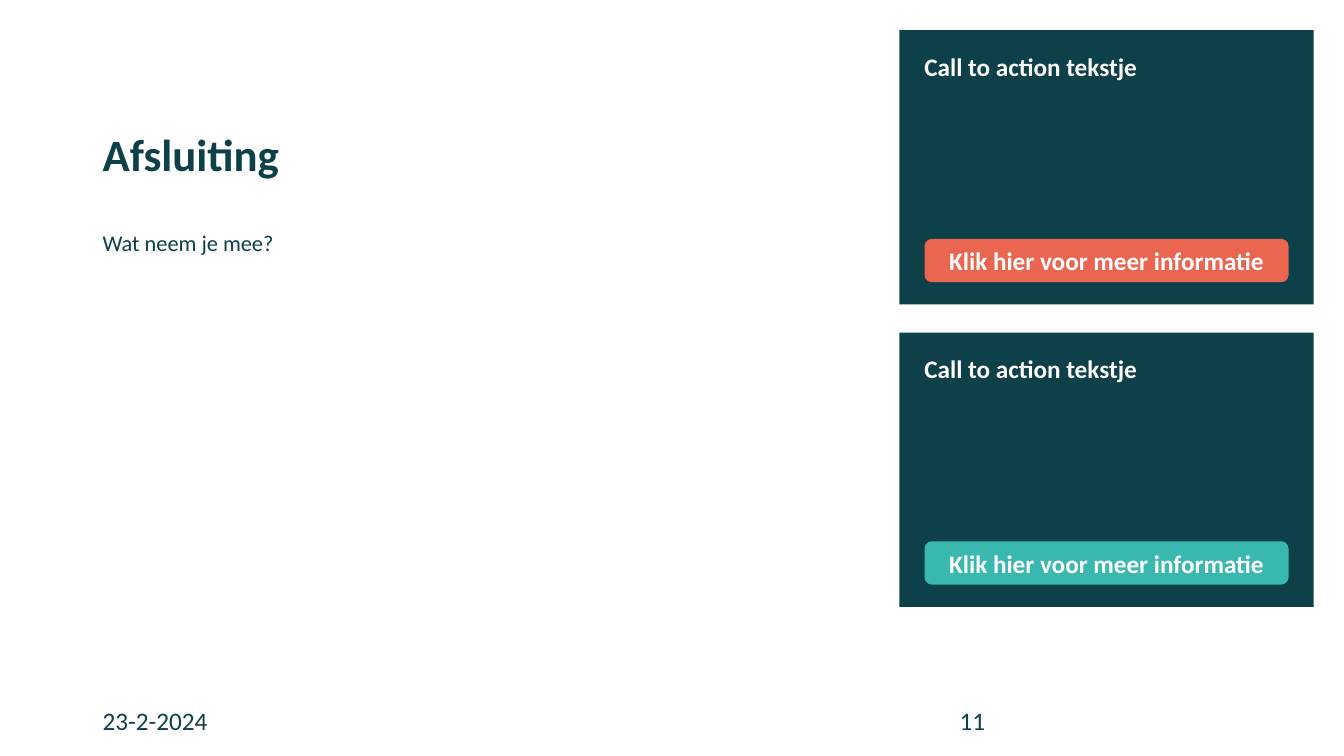
"""Build the closing slide with two call-to-action cards."""
from dataclasses import dataclass

from pptx import Presentation
from pptx import util as u
from pptx.dml.color import RGBColor
from pptx.enum import shapes, text
from pptx.shapes.autoshape import Shape
from pptx.shapes.shapetree import GroupShapes, SlideShapes

EMU_PER_PX = 9144
ShapeTree = SlideShapes | GroupShapes


@dataclass(frozen=True)
class Theme:
    font: str = "Calibri"
    dark: str = "0D4049"
    light: str = "FFFFFF"
    coral: str = "EB6650"
    teal: str = "38B8AF"
    title_size: int = 32
    label_size: int = 18
    body_size: int = 16


THEME = Theme()


@dataclass(frozen=True)
class Box:
    left: int
    top: int
    width: int
    height: int

    def emu(self) -> tuple[int, int, int, int]:
        return (px(self.left), px(self.top), px(self.width), px(self.height))


@dataclass(frozen=True)
class Label:
    wording: str
    box: Box
    size: int = THEME.label_size
    color: str = THEME.dark
    bold: bool = False
    centered: bool = False
    at_bottom: bool = False
    line_spacing: float = 1.0


@dataclass(frozen=True)
class Card:
    top: int
    button_color: str


LABELS = (
    Label("Afsluiting", Box(92, 40, 542, 145), THEME.title_size,
          bold=True, at_bottom=True, line_spacing=0.9),
    Label("Wat neem je mee?", Box(92, 225, 600, 417), THEME.body_size,
          line_spacing=0.9),
    Label("23-2-2024", Box(92, 695, 300, 40)),
    Label("11", Box(942, 695, 79, 40)),
)
CARDS = (Card(30, THEME.coral), Card(330, THEME.teal))


def px(length: int) -> u.Emu:
    return u.Emu(length * EMU_PER_PX)


def add_label(tree: ShapeTree, label: Label) -> None:
    frame = tree.add_textbox(*label.box.emu()).text_frame
    frame.word_wrap = True
    frame.vertical_anchor = (
        text.MSO_ANCHOR.BOTTOM if label.at_bottom else text.MSO_ANCHOR.TOP
    )
    frame.text = label.wording
    paragraph = frame.paragraphs[0]
    paragraph.alignment = text.PP_ALIGN.CENTER if label.centered else text.PP_ALIGN.LEFT
    paragraph.line_spacing = label.line_spacing
    font = paragraph.runs[0].font
    font.name = THEME.font
    font.size = u.Pt(label.size)
    font.bold = label.bold
    font.color.rgb = RGBColor.from_string(label.color)


def add_panel(
    tree: ShapeTree, kind: shapes.MSO_SHAPE, box: Box, color: str
) -> Shape:
    panel = tree.add_shape(kind, *box.emu())
    panel.shadow.inherit = False
    panel.fill.solid()
    panel.fill.fore_color.rgb = RGBColor.from_string(color)
    panel.line.fill.background()
    return panel


def add_card(tree: SlideShapes, card: Card) -> None:
    add_panel(tree, shapes.MSO_SHAPE.RECTANGLE,
              Box(892, card.top, 411, 272), THEME.dark)
    button = tree.add_group_shape().shapes
    add_panel(button, shapes.MSO_SHAPE.ROUNDED_RECTANGLE,
              Box(917, card.top + 207, 361, 43), card.button_color)
    add_label(button, Label("Klik hier voor meer informatie",
                            Box(917, card.top + 206, 361, 43), color=THEME.light,
                            bold=True, centered=True, at_bottom=True,
                            line_spacing=0.9))
    add_label(tree, Label("Call to action tekstje",
                          Box(907, card.top + 16, 384, 71),
                          color=THEME.light, bold=True))


def main() -> None:
    presentation = Presentation()
    presentation.slide_width = px(1333)
    presentation.slide_height = px(750)
    slide = presentation.slides.add_slide(presentation.slide_layouts[6])
    for label in LABELS:
        add_label(slide.shapes, label)
    for card in CARDS:
        add_card(slide.shapes, card)
    presentation.save("out.pptx")


if __name__ == "__main__":
    main()
